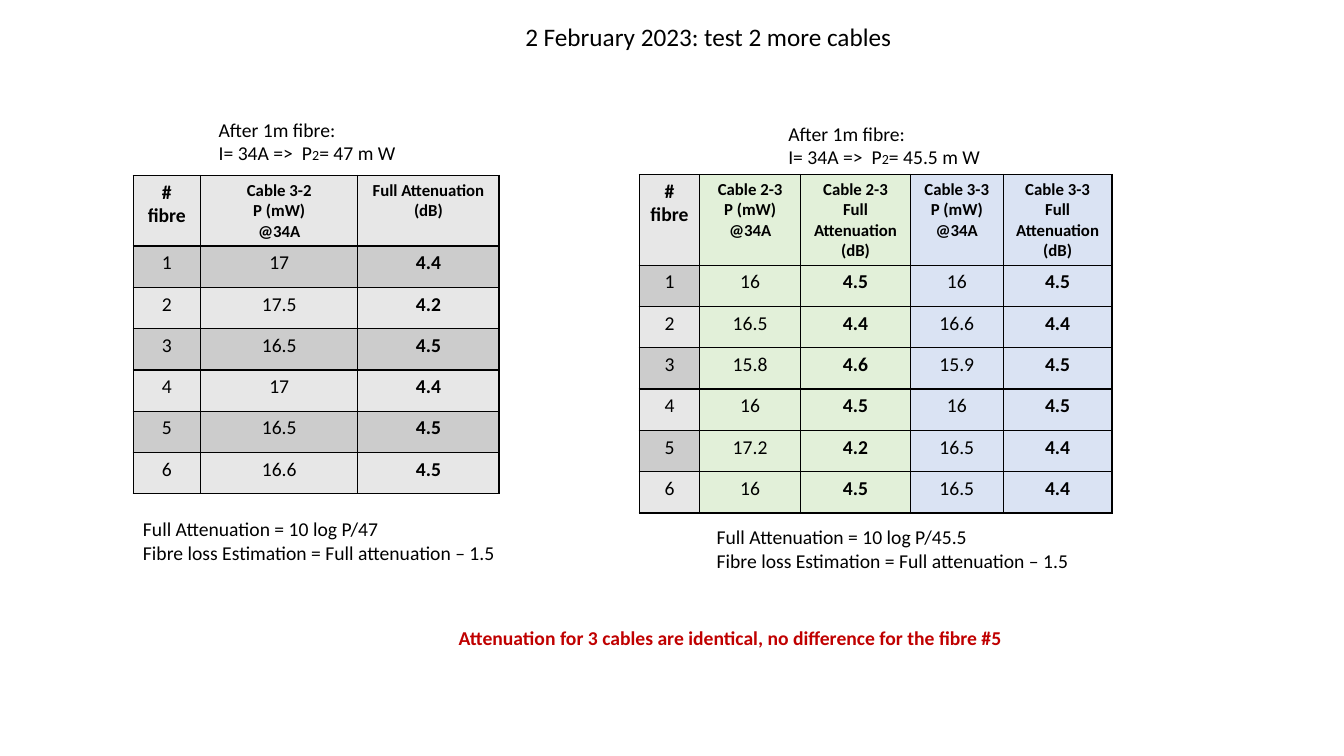
from lxml import etree
from pptx import Presentation
from pptx.dml.color import RGBColor
from pptx.enum.text import MSO_ANCHOR, MSO_AUTO_SIZE, PP_ALIGN
from pptx.oxml.ns import qn
from pptx.util import Inches, Pt

CENTER, LEFT = PP_ALIGN.CENTER, PP_ALIGN.LEFT
TOP = MSO_ANCHOR.TOP
GROW = MSO_AUTO_SIZE.SHAPE_TO_FIT_TEXT

FONT = "Calibri"
COLORS = {
    "text": "000000",
    "conclusion": "C00000",
    "band_dark": "CCCCCC",
    "band_light": "E7E7E7",
    "green": "E2F0D9",
    "blue": "DAE3F3",
}
ROW_HEIGHT = 0.41

# Cable measurements: power in mW, attenuation in dB
CABLE_3_2 = [
    ("17", "4.4"), ("17.5", "4.2"), ("16.5", "4.5"),
    ("17", "4.4"), ("16.5", "4.5"), ("16.6", "4.5"),
]
CABLES_2_3_AND_3_3 = [
    ("16", "4.5", "16", "4.5"), ("16.5", "4.4", "16.6", "4.4"),
    ("15.8", "4.6", "15.9", "4.5"), ("16", "4.5", "16", "4.5"),
    ("17.2", "4.2", "16.5", "4.4"), ("16", "4.5", "16.5", "4.4"),
]


def format_run(run, size=14, bold=False, color="text"):
    run.font.name = FONT
    run.font.size = Pt(size)
    run.font.bold = bold
    run.font.color.rgb = RGBColor.from_string(COLORS[color])


def fill_text(text_frame, text, align=LEFT, **style):
    text_frame.text = text
    for paragraph in text_frame.paragraphs:
        paragraph.alignment = align
        for run in paragraph.runs:
            format_run(run, **style)


def add_title(slide, text, left, top, width, height):
    title = slide.shapes.title
    title.left, title.top = Inches(left), Inches(top)
    title.width, title.height = Inches(width), Inches(height)
    text_frame = title.text_frame
    text_frame.word_wrap = False
    text_frame.auto_size = GROW
    text_frame.vertical_anchor = TOP
    fill_text(text_frame, text, size=18)


def add_text(slide, text, left, top, width, height, wrap=False, **style):
    box = slide.shapes.add_textbox(
        Inches(left), Inches(top), Inches(width), Inches(height))
    text_frame = box.text_frame
    text_frame.word_wrap = wrap
    text_frame.auto_size = GROW
    fill_text(text_frame, text, **style)
    return text_frame


def add_reference_power(slide, power, left, top):
    text_frame = add_text(slide, "After 1m fibre:\nI= 34A =>  P",
                          left, top, 2.12, 0.57, wrap=True)
    paragraph = text_frame.paragraphs[1]
    for text, size in (("2", 10), (f"= {power} m W", 14)):
        run = paragraph.add_run()
        run.text = text
        format_run(run, size=size)


def add_formulas(slide, power, left, top):
    add_text(slide, f"Full Attenuation = 10 log P/{power}\n"
             "Fibre loss Estimation = Full attenuation – 1.5",
             left, top, 3.73, 0.57)


def set_borders(cell):
    properties = cell._tc.get_or_add_tcPr()
    for position, side in enumerate(("a:lnL", "a:lnR", "a:lnT", "a:lnB")):
        line = etree.Element(qn(side), w=str(Pt(1)))
        fill = etree.SubElement(line, qn("a:solidFill"))
        etree.SubElement(fill, qn("a:srgbClr"), val=COLORS["text"])
        properties.insert(position, line)


def add_fibre_table(slide, headers, measurements, left, top, widths,
                    header_height, tints):
    rows = [("# fibre", *headers)]
    rows += [(str(fibre), *values)
             for fibre, values in enumerate(measurements, start=1)]
    heights = [header_height] + [ROW_HEIGHT] * len(measurements)
    table = slide.shapes.add_table(
        len(rows), len(widths), Inches(left), Inches(top),
        Inches(sum(widths)), Inches(sum(heights))).table
    for column, width in zip(table.columns, widths):
        column.width = Inches(width)
    for row, height in zip(table.rows, heights):
        row.height = Inches(height)

    for row_index, values in enumerate(rows):
        band = "band_dark" if row_index % 2 else "band_light"
        is_header = row_index == 0
        for column_index, value in enumerate(values):
            cell = table.cell(row_index, column_index)
            is_attenuation = column_index > 0 and column_index % 2 == 0
            fill_text(cell.text_frame, value, CENTER,
                      size=12 if is_header and column_index else 14,
                      bold=is_header or is_attenuation)
            cell.fill.solid()
            cell.fill.fore_color.rgb = RGBColor.from_string(
                COLORS[tints[column_index] or band])
            set_borders(cell)


def main():
    presentation = Presentation()
    presentation.slide_width = Inches(13.33)
    presentation.slide_height = Inches(7.5)
    slide = presentation.slides.add_slide(presentation.slide_layouts[5])

    add_title(slide, "2 February 2023: test 2 more cables",
              5.11, 0.16, 3.88, 0.4)

    # Left: cable 3-2
    add_reference_power(slide, "47", 2.07, 1.12)
    add_fibre_table(slide,
                    ("Cable 3-2\nP (mW)\n@34A", "Full Attenuation (dB)"),
                    CABLE_3_2, 1.32, 1.74, (0.67, 1.56, 1.4), 0.69,
                    (None, None, None))
    add_formulas(slide, "47", 1.32, 5.08)

    # Right: cables 2-3 and 3-3
    add_reference_power(slide, "45.5", 7.72, 1.16)
    headers = [f"Cable {cable}\n{quantity}" for cable in ("2-3", "3-3")
               for quantity in ("P (mW)\n@34A", "Full Attenuation (dB)")]
    add_fibre_table(slide, headers, CABLES_2_3_AND_3_3, 6.34, 1.73,
                    (0.6, 1, 1.09, 0.92, 1.08), 0.9,
                    (None, "green", "green", "blue", "blue"))
    add_formulas(slide, "45.5", 7.01, 5.16)

    # Conclusion
    add_text(slide, "Attenuation for 3 cables are identical, "
             "no difference for the fibre #5",
             4.45, 6.16, 5.64, 0.34, bold=True, color="conclusion")

    presentation.save("out.pptx")


if __name__ == "__main__":
    main()
